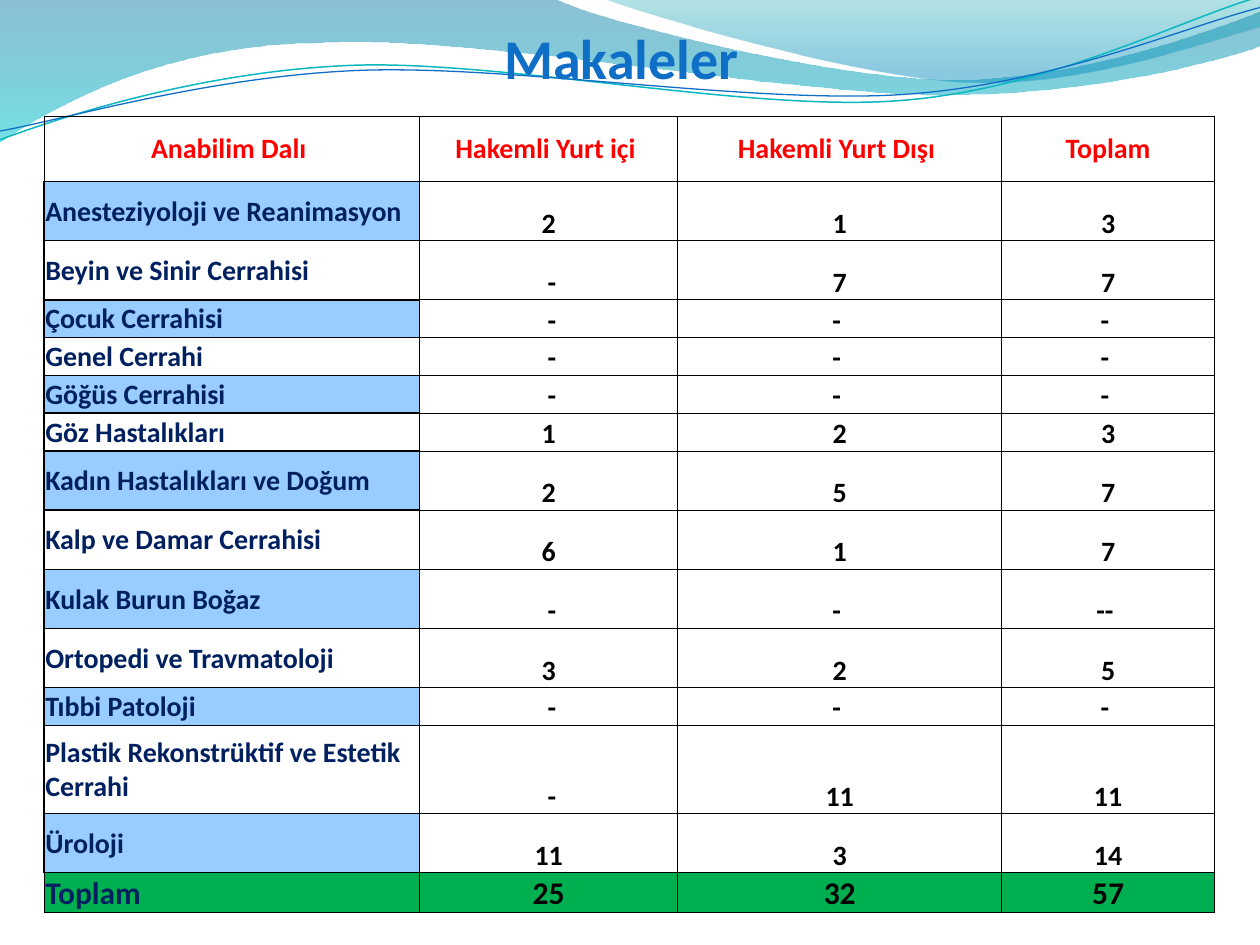
"""Build the slide with the article counts of each department."""
from dataclasses import dataclass

from lxml import etree
from pptx import Presentation
from pptx import util as u
from pptx.dml import color
from pptx.enum import text
from pptx.oxml import ns


@dataclass(frozen=True)
class Theme:
    font: str = "Calibri"
    title: str = "0F6FC6"
    header: str = "FF0000"
    label: str = "002060"
    ink: str = "000000"
    white: str = "FFFFFF"
    band: str = "99CCFF"
    total: str = "00B050"
    teal: str = "0AB8BF"
    title_size: int = 32
    gap_size: int = 42
    body_size: int = 16
    total_size: int = 18
    thin: float = 0.5
    thick: float = 1


NBSP = chr(160)
COLUMNS = [2.98, 2.05, 2.57, 1.69]
ROWS = [
    (0.52, "Anabilim Dalı ", "Hakemli Yurt içi ", "Hakemli Yurt Dışı ", "Toplam"),
    (0.47, "Anesteziyoloji ve Reanimasyon", "2", "1", "3"),
    (0.47, "Beyin ve Sinir Cerrahisi", "-", "7", "7"),
    (0.3, "Çocuk Cerrahisi", "-", "-", "-"),
    (0.3, "Genel Cerrahi", "-", "-", "-"),
    (0.3, "Göğüs Cerrahisi", "-", "-", "-"),
    (0.3, "Göz Hastalıkları", "1", "2", "3"),
    (0.47, "Kadın Hastalıkları ve Doğum", "2", "5", "7"),
    (0.47, "Kalp ve Damar Cerrahisi", "6", "1", "7"),
    (0.47, "Kulak Burun Boğaz", "-", "-", "--"),
    (0.47, "Ortopedi ve Travmatoloji", "3", "2", "5"),
    (0.3, "Tıbbi Patoloji", "-", "-", "-"),
    (0.7, "Plastik Rekonstrüktif ve Estetik Cerrahi", "-", "11", "11"),
    (0.47, "Üroloji", "11", "3", "14"),
    (0.3, "Toplam", "25", "32", "57"),
]
LEFT_WAVE = [
    (0, -0.01), (4.4, -0.01),
    (4.76, 0.17, 6.64, 0.63, 7.58, 0.63), (8.53, 0.63, 9.58, 0.26, 10, 0.09),
    (10.01, 0.36),
    (9.83, 0.44, 8.7, 0.76, 7.46, 0.75), (6.22, 0.75, 3.82, 0.28, 2.57, 0.34),
    (1.29, 0.35, 0.46, 0.83, -0.01, 1.13), (0, -0.01),
]
RIGHT_WAVE = [
    (4.79, -0.01),
    (5.09, 0.11, 6.82, 0.62, 7.69, 0.65), (8.56, 0.69, 9.61, 0.32, 10, 0.21),
    (10, 0), (4.79, -0.01),
]
TEAL_LINE = [
    (0, 1.11), (0.48, 0.93, 1.58, 0.57, 2.77, 0.52),
    (3.95, 0.47, 5.93, 0.89, 7.13, 0.8), (8.33, 0.71, 9.38, 0.15, 9.98, -0.02),
]
BLUE_LINE = [
    (0, 1.04), (0.47, 0.96, 1.64, 0.61, 2.83, 0.56),
    (4.03, 0.51, 5.97, 0.83, 7.17, 0.75), (8.36, 0.67, 9.41, 0.21, 10, 0.06),
]


def rgb(value):
    return color.RGBColor.from_string(value)


def add_run(p, words, *, font, size, ink, bold=True):
    r = p.add_run()
    r.text = words
    r.font.name, r.font.size, r.font.bold = font, u.Pt(size), bold
    r.font.color.rgb = rgb(ink)


class Deck:
    """Hold the theme and the current slide."""

    def __init__(self, prs, theme):
        self.theme = theme
        self.s = prs.slides.add_slide(prs.slide_layouts[5])

    def curve(self, segments, close):
        start, *rest = [(u.Inches(seg[i]), u.Inches(seg[i + 1]))
                        for seg in segments for i in range(0, len(seg), 2)]
        builder = self.s.shapes.build_freeform(*start)
        builder.add_line_segments(rest, close=close)
        sp = builder.convert_to_shape()
        sp.shadow.inherit = False
        steps = iter(list(sp._element.iter(ns.qn("a:lnTo"))))
        for seg in segments[1:]:
            step = next(steps)
            if len(seg) == 6:
                bezier = etree.Element(ns.qn("a:cubicBezTo"))
                step.addprevious(bezier)
                for part in (step, next(steps), next(steps)):
                    bezier.append(part[0])
                    part.getparent().remove(part)
        return sp

    def wave(self, segments, stops):
        sp = self.curve(segments, True)
        sp.line.fill.background()
        sp.fill.gradient()
        sp.fill.gradient_angle = 270
        for stop, (position, value, _) in zip(sp.fill.gradient_stops, stops):
            stop.position = position
            stop.color.rgb = rgb(value)
        colors = sp._element.spPr.iter(ns.qn("a:srgbClr"))
        for clr, (_, _, opacity) in zip(colors, stops):
            etree.SubElement(clr, ns.qn("a:alpha"), val=str(opacity * 1000))

    def line(self, segments, value, width):
        sp = self.curve(segments, False)
        sp.fill.background()
        sp.line.color.rgb = rgb(value)
        sp.line.width = u.Pt(width)

    def title(self, words):
        th, sp = self.theme, self.s.shapes.title
        self.s.shapes._spTree.append(sp._element)
        sp.left, sp.top, sp.width, sp.height = map(u.Inches, (0.5, 0, 9, 0.78))
        tf = sp.text_frame
        tf.auto_size = text.MSO_AUTO_SIZE.NONE
        tf.vertical_anchor = text.MSO_ANCHOR.BOTTOM
        tf.margin_top, tf.margin_bottom = 0, u.Inches(0.03)
        p = tf.paragraphs[0]
        p.alignment = text.PP_ALIGN.CENTER
        add_run(p, words, font=th.font, size=th.title_size, ink=th.title)
        add_run(p, " ", font=th.font, size=th.gap_size, ink=th.title, bold=False)

    def borders(self, cell, widths):
        pr = cell._tc.get_or_add_tcPr()
        for side, width in zip("LRTB", widths):
            ln = etree.SubElement(pr, ns.qn(f"a:ln{side}"), w=str(u.Pt(width)))
            fill = etree.SubElement(ln, ns.qn("a:solidFill"))
            etree.SubElement(fill, ns.qn("a:srgbClr"), val=self.theme.ink)

    def cell(self, cell, words, row, col, last):
        th = self.theme
        is_label = col == 0 and row > 0
        thin, thick = th.thin, th.thick
        widths = [thin] * 4
        if is_label and row < last:
            widths = [thick, thin, thin if row == 1 else thick,
                      thin if row == last - 1 else thick]
        self.borders(cell, widths)
        if row == last:
            fill = th.total
        elif is_label:
            fill = th.band if row % 2 else th.white
        else:
            fill = None
        if fill:
            cell.fill.solid()
            cell.fill.fore_color.rgb = rgb(fill)
        else:
            cell.fill.background()
        cell.margin_left = cell.margin_right = cell.margin_top = u.Inches(0.01)
        cell.margin_bottom = 0
        middle = row == 0 or col == 0
        cell.vertical_anchor = text.MSO_ANCHOR.MIDDLE if middle else text.MSO_ANCHOR.BOTTOM
        p = cell.text_frame.paragraphs[0]
        p.alignment = text.PP_ALIGN.LEFT if is_label else text.PP_ALIGN.CENTER
        if words.startswith("-"):
            words = NBSP + words if col == 1 else words + NBSP
        ink = th.header if row == 0 else th.label if col == 0 else th.ink
        size = th.total_size if row == last else th.body_size
        add_run(p, words, font=th.font, size=size, ink=ink)

    def table(self, rows, columns, left, top):
        frame = self.s.shapes.add_table(
            len(rows), len(columns), u.Inches(left), u.Inches(top),
            u.Inches(sum(columns)), u.Inches(sum(row[0] for row in rows)))
        table = frame.table
        table.first_row = table.horz_banding = False
        for column, width in zip(table.columns, columns):
            column.width = u.Inches(width)
        for i, (height, *words) in enumerate(rows):
            table.rows[i].height = u.Inches(height)
            for j, word in enumerate(words):
                self.cell(table.cell(i, j), word, i, j, len(rows) - 1)


def main():
    prs = Presentation()
    prs.slide_width, prs.slide_height = u.Inches(10), u.Inches(7.5)
    theme = Theme()
    deck = Deck(prs, theme)
    deck.wave(LEFT_WAVE, [(0, "0074A1", 45), (1, "00C6CF", 55)])
    deck.wave(RIGHT_WAVE, [(0, "00A1A9", 30), (0.8, "008BBF", 45)])
    deck.line(TEAL_LINE, theme.teal, 0.85)
    deck.line(BLUE_LINE, theme.title, 0.75)
    deck.title("Makaleler")
    deck.table(ROWS, COLUMNS, 0.35, 0.92)
    prs.save("out.pptx")


if __name__ == "__main__":
    main()
